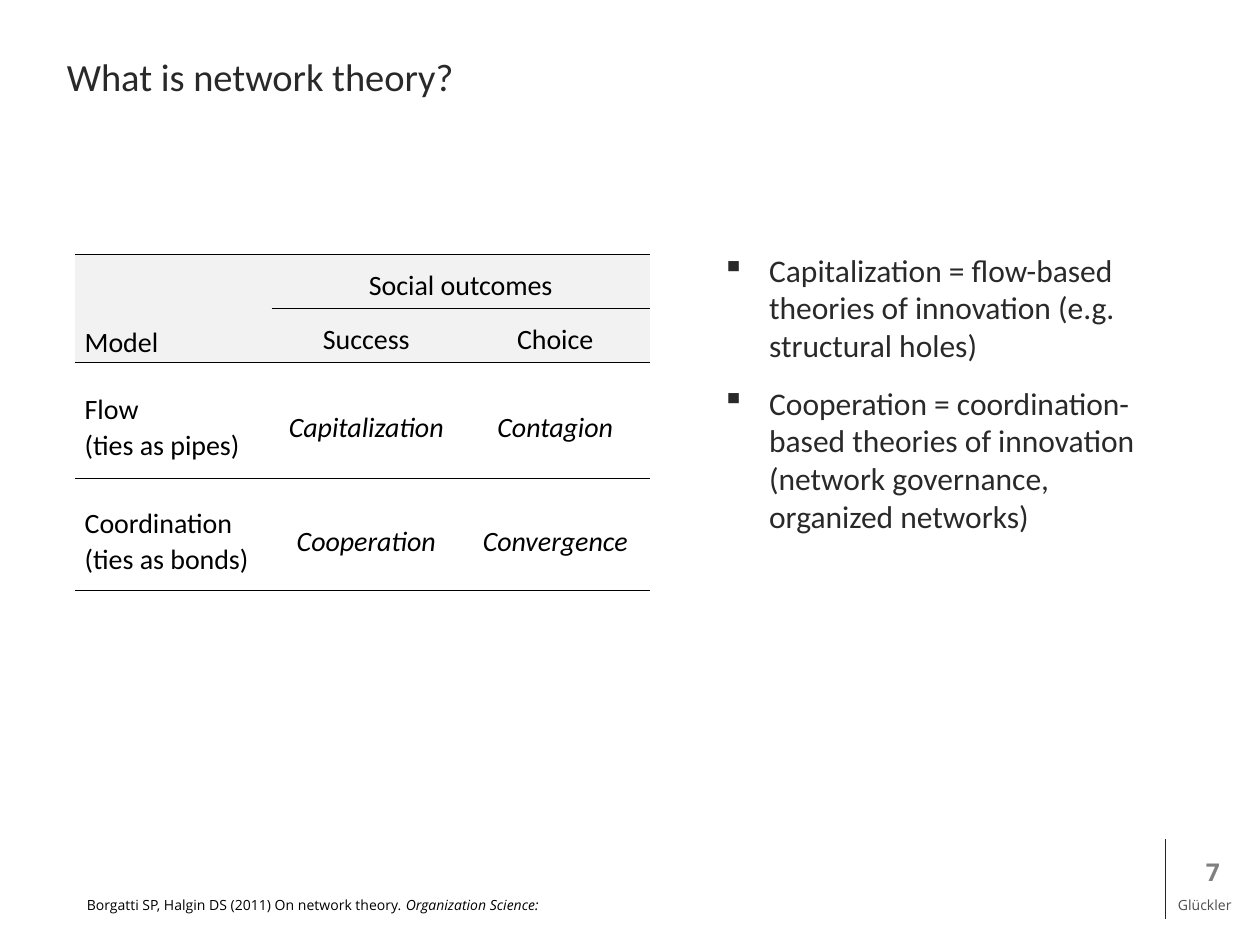
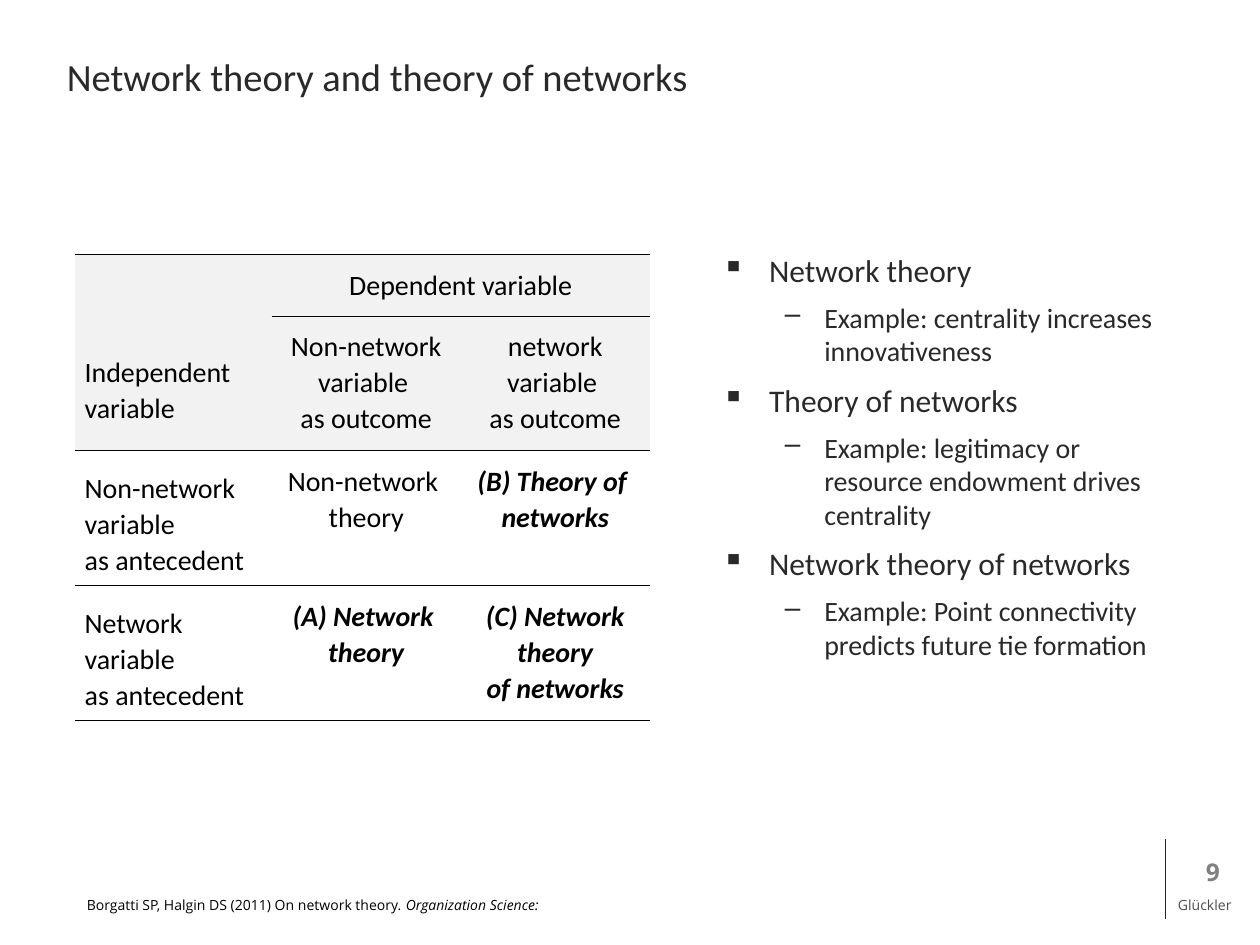
from lxml import etree
from pptx import Presentation
from pptx.dml.color import RGBColor
from pptx.enum.shapes import MSO_CONNECTOR
from pptx.enum.text import MSO_ANCHOR, MSO_AUTO_SIZE, PP_ALIGN
from pptx.oxml.ns import qn
from pptx.util import Pt

LEFT, CENTER, RIGHT = PP_ALIGN.LEFT, PP_ALIGN.CENTER, PP_ALIGN.RIGHT
TOP, MIDDLE = MSO_ANCHOR.TOP, MSO_ANCHOR.MIDDLE
FIXED, GROW = MSO_AUTO_SIZE.NONE, MSO_AUTO_SIZE.SHAPE_TO_FIT_TEXT
STRAIGHT = MSO_CONNECTOR.STRAIGHT
TITLE_ONLY = 5

# Shared style
HEADING_FONT, FOOTER_FONT = "Calibri", "Open Sans"
INK, BLACK, GRAY, DARK_GRAY = "292929", "000000", "808080", "4D4D4D"
MAROON, HEADER_FILL = "650907", "F2F2F2"
COLUMN_WIDTHS = (112.3, 108, 108)
HEADER_ROWS = 2
ITALIC = {"italic": True}
STRONG = {"italic": True, "bold": True}

# Per level: bullet, text indent, hanging indent, size, space before, space after
BULLET_LEVELS = (
    ("▪", 27, 27, 18, 7.5, 3.6),
    ("–", 58.5, 22.5, 16, 3.2, 0),
)


def rgb(hex_string):
    return RGBColor.from_string(hex_string)


def write(paragraph, text, size=16, font=HEADING_FONT, color=BLACK,
          bold=False, italic=False, align=LEFT):
    """Add text to a paragraph; a newline becomes a line break."""
    paragraph.alignment = align
    for number, line in enumerate(text.split("\n")):
        if number:
            paragraph.add_line_break()
        run = paragraph.add_run()
        run.text = line
        run.font.size, run.font.name = Pt(size), font
        run.font.bold, run.font.italic = bold, italic
        run.font.color.rgb = rgb(color)


def set_borders(cell, top, bottom):
    properties = cell._tc.get_or_add_tcPr()
    for side, drawn in (("L", False), ("R", False), ("T", top), ("B", bottom)):
        border = etree.SubElement(properties, qn(f"a:ln{side}"), w=str(Pt(0.5)))
        if drawn:
            fill = etree.SubElement(border, qn("a:solidFill"))
            etree.SubElement(fill, qn("a:srgbClr"), val=BLACK)
        else:
            etree.SubElement(border, qn("a:noFill"))


class Deck:
    def __init__(self):
        self.presentation = Presentation()
        self.presentation.slide_width = Pt(720)
        self.presentation.slide_height = Pt(540)
        self.slide = None

    def new_slide(self, title, number):
        layout = self.presentation.slide_layouts[TITLE_ONLY]
        self.slide = self.presentation.slides.add_slide(layout)
        self.title(title)
        self.footer(number)

    def title(self, text):
        heading = self.slide.shapes.title
        heading.left, heading.top = Pt(31), Pt(9.4)
        heading.width, heading.height = Pt(527), Pt(68.4)
        frame = heading.text_frame
        frame.auto_size, frame.vertical_anchor = FIXED, MIDDLE
        write(frame.paragraphs[0], text, size=22, color=INK)

    def text_box(self, left, top, width, height, wrap=True):
        box = self.slide.shapes.add_textbox(Pt(left), Pt(top), Pt(width), Pt(height))
        frame = box.text_frame
        frame.word_wrap = wrap
        frame.auto_size = FIXED if wrap else GROW
        return frame

    def rule(self, x, top, bottom, color):
        line = self.slide.shapes.add_connector(STRAIGHT, Pt(x), Pt(top), Pt(x), Pt(bottom))
        line.line.color.rgb, line.line.width = rgb(color), Pt(1)
        etree.SubElement(line._element.spPr, qn("a:effectLst"))

    def footer(self, number):
        self.rule(666, 479.5, 525, MAROON)
        author = self.text_box(666, 508.5, 46.8, 17, wrap=False)
        write(author.paragraphs[0], "Glückler", size=8, font=FOOTER_FONT, color=DARK_GRAY)
        page = self.text_box(660.2, 486, 44, 24)
        write(page.paragraphs[0], str(number), size=14, font=FOOTER_FONT,
              color=GRAY, bold=True, align=RIGHT)

    def citation(self, reference, journal):
        source = self.text_box(42.5, 509, 296.6, 17, wrap=False).paragraphs[0]
        write(source, reference, size=8, font=FOOTER_FONT)
        write(source, journal, size=8, font=FOOTER_FONT, italic=True)

    def bullets(self, items):
        frame = self.text_box(405.4, 139.7, 260.6, 323.3)
        for position, (level, text) in enumerate(items):
            symbol, indent, hanging, size, before, after = BULLET_LEVELS[level]
            paragraph = frame.add_paragraph() if position else frame.paragraphs[0]
            properties = paragraph._p.get_or_add_pPr()
            properties.set("marL", str(Pt(indent)))
            properties.set("indent", str(-Pt(hanging)))
            etree.SubElement(properties, qn("a:buChar"), char=symbol)
            paragraph.level = level
            paragraph.space_before = Pt(before if position else 0)
            paragraph.space_after = Pt(after)
            write(paragraph, text, size=size, color=INK)

    def matrix(self, rows, heights, body_anchor):
        """Draw a cross table whose first row heads the last two columns."""
        table = self.slide.shapes.add_table(
            len(rows), len(COLUMN_WIDTHS), Pt(43), Pt(145.2),
            Pt(sum(COLUMN_WIDTHS)), Pt(sum(heights))).table
        table.first_row = table.horz_banding = False
        for column, width in zip(table.columns, COLUMN_WIDTHS):
            column.width = Pt(width)
        for row, height in zip(table.rows, heights):
            row.height = Pt(height)
        table.cell(0, 1).merge(table.cell(0, 2))

        for r, row in enumerate(rows):
            for c, (text, emphasis) in enumerate(row):
                cell = table.cell(r, c)
                # Every row edge is ruled, except under the empty corner
                set_borders(cell, top=r != 1 or c > 0, bottom=r != 0 or c > 0)
                if r < HEADER_ROWS:
                    cell.fill.solid()
                    cell.fill.fore_color.rgb = rgb(HEADER_FILL)
                else:
                    cell.fill.background()
                cell.margin_left = cell.margin_right = Pt(5.4)
                cell.margin_top, cell.margin_bottom = Pt(7.2), 0
                if c == 0:
                    cell.vertical_anchor = MIDDLE
                else:
                    cell.vertical_anchor = TOP if r < HEADER_ROWS else body_anchor
                if text:
                    paragraph = cell.text_frame.paragraphs[0]
                    paragraph.line_spacing, paragraph.space_after = 1.05, Pt(2)
                    write(paragraph, text, align=CENTER if c else LEFT, **emphasis)


def plain(*texts):
    return [(text, {}) for text in texts]


def main():
    deck = Deck()
    source = ("Borgatti SP, Halgin DS (2011) On network theory. ", "Organization Science:")

    # Network theory: models against outcomes
    deck.new_slide("What is network theory?", 7)
    deck.bullets([
        (0, "Capitalization = flow-based theories of innovation (e.g. structural holes)"),
        (0, "Cooperation = coordination-based theories of innovation "
            "(network governance, organized networks)"),
    ])
    deck.citation(*source)
    deck.matrix([
        plain("", "Social outcomes", ""),
        plain("Model", "Success", "Choice"),
        plain("Flow \n(ties as pipes)")
        + [("Capitalization", ITALIC), ("Contagion", ITALIC)],
        plain("Coordination \n(ties as bonds)")
        + [("Cooperation", ITALIC), ("Convergence", ITALIC)],
    ], heights=(31, 31, 66.5, 64), body_anchor=MIDDLE)

    # Theory of networks: antecedents against outcomes
    deck.new_slide("Network theory and theory of networks", 9)
    deck.bullets([
        (0, "Network theory"),
        (1, "Example: centrality increases innovativeness"),
        (0, "Theory of networks"),
        (1, "Example: legitimacy or resource endowment drives centrality"),
        (0, "Network theory of networks"),
        (1, "Example: Point connectivity predicts future tie formation"),
    ])
    deck.citation(*source)
    deck.matrix([
        plain("", "Dependent variable", ""),
        plain("Independent\nvariable", "Non-network variable \nas outcome",
              "network variable \nas outcome"),
        plain("Non-network variable \nas antecedent", "Non-network \ntheory")
        + [("(B) Theory of \nnetworks", STRONG)],
        plain("Network variable \nas antecedent")
        + [("(A) Network \ntheory", STRONG), ("(C) Network theory\nof networks", STRONG)],
    ], heights=(35.4, 77, 77, 77), body_anchor=TOP)

    deck.presentation.save("out.pptx")


if __name__ == "__main__":
    main()
